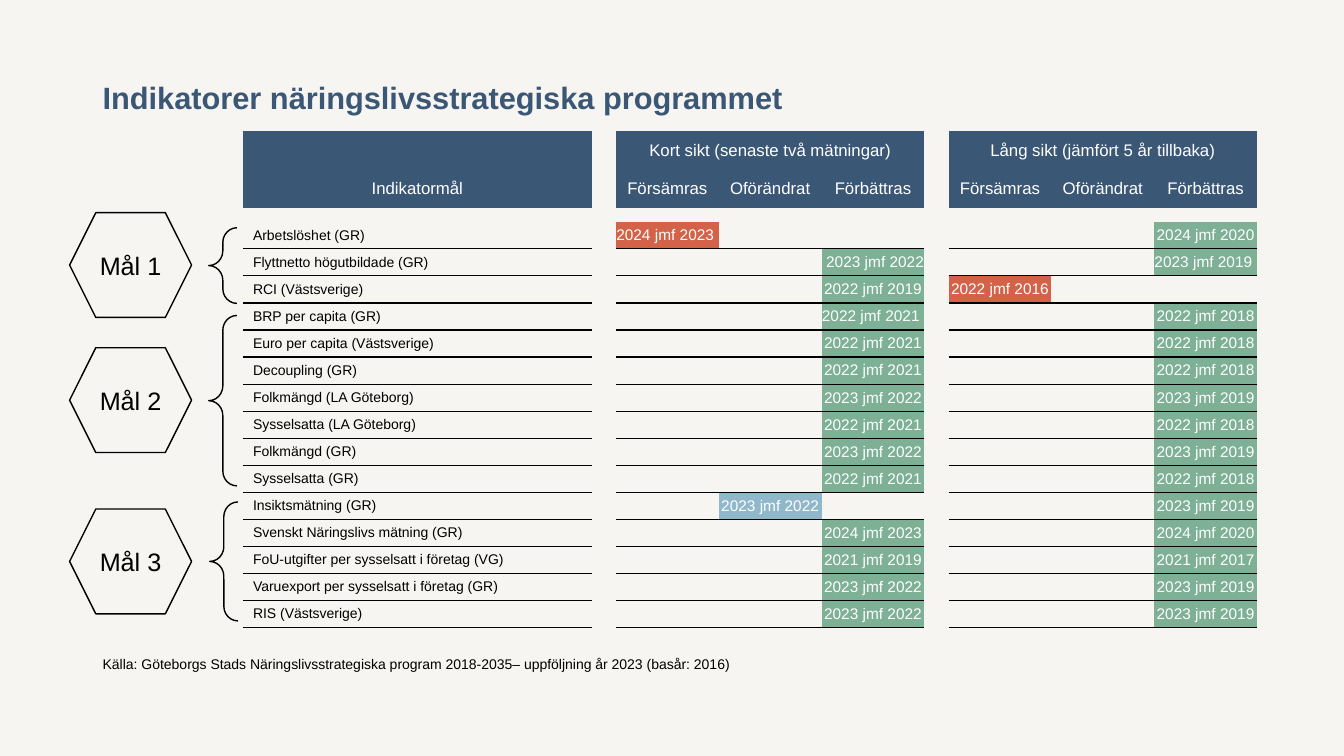
from dataclasses import dataclass

from lxml import etree
from pptx import Presentation
from pptx import util as u
from pptx.dml.color import RGBColor
from pptx.enum import shapes, text
from pptx.oxml import ns


@dataclass(frozen=True)
class Theme:
    font: str = "Arial"
    background: str = "F6F5F1"
    navy: str = "3B5776"
    black: str = "000000"
    white: str = "FFFFFF"
    outcomes: tuple = ("D36248", "8FB8CA", "7DB094")
    title: int = 22
    goal: int = 18
    header: int = 12
    period: int = 11
    body: int = 10
    empty: int = 8
    line: int = 1


THEME = Theme()
WORSE, SAME, BETTER = range(3)
SPACER_COLUMNS = (1, 5)
PERIOD_STARTS = {2: "Kort sikt (senaste två mätningar)", 6: "Lång sikt (jämfört 5 år tillbaka)"}
OUTCOME_NAMES = ("Försämras", "Oförändrat", "Förbättras")
FIRST_DATA_ROW = 3
NO_GRID_STYLE = "{2D5ABB26-0587-4C30-8999-92F81FD0307C}"
ZERO_MARGINS = dict.fromkeys(("margin_left", "margin_right", "margin_top", "margin_bottom"), 0)

INDICATORS = [
    ("Arbetslöshet (GR)", WORSE, "2024 jmf 2023 ", BETTER, "2024 jmf 2020"),
    ("Flyttnetto högutbildade (GR)", BETTER, " 2023 jmf 2022", BETTER, "2023 jmf 2019 "),
    ("RCI (Västsverige)", BETTER, "2022 jmf 2019", WORSE, "2022 jmf 2016"),
    ("BRP per capita (GR)", BETTER, "2022 jmf 2021 ", BETTER, "2022 jmf 2018"),
    ("Euro per capita (Västsverige)", BETTER, "2022 jmf 2021", BETTER, "2022 jmf 2018"),
    ("Decoupling (GR)", BETTER, "2022 jmf 2021", BETTER, "2022 jmf 2018"),
    ("Folkmängd (LA Göteborg)", BETTER, "2023 jmf 2022", BETTER, "2023 jmf 2019"),
    ("Sysselsatta (LA Göteborg)", BETTER, "2022 jmf 2021", BETTER, "2022 jmf 2018"),
    ("Folkmängd (GR)", BETTER, "2023 jmf 2022", BETTER, "2023 jmf 2019"),
    ("Sysselsatta (GR)", BETTER, "2022 jmf 2021", BETTER, "2022 jmf 2018"),
    ("Insiktsmätning (GR)", SAME, "2023 jmf 2022", BETTER, "2023 jmf 2019"),
    ("Svenskt Näringslivs mätning (GR)", BETTER, "2024 jmf 2023", BETTER, "2024 jmf 2020"),
    ("FoU-utgifter per sysselsatt i företag (VG)", BETTER, "2021 jmf 2019", BETTER, "2021 jmf 2017"),
    ("Varuexport per sysselsatt i företag (GR)", BETTER, "2023 jmf 2022", BETTER, "2023 jmf 2019"),
    ("RIS (Västsverige)", BETTER, "2023 jmf 2022", BETTER, "2023 jmf 2019"),
]

GOALS = [
    ("Mål 1", 2.11, (2.07, 2.26, 0.28, 0.75)),
    ("Mål 2", 3.45, (2.07, 3.13, 0.28, 1.69)),
    ("Mål 3", 5.05, (2.08, 4.98, 0.28, 1.18)),
]


def apply_format(target, values):
    for name, value in values.items():
        setattr(target, name, value)


def inches(*lengths):
    return [u.Inches(length) for length in lengths]


def write(frame, content, size, color, bold=False, **paragraph_format):
    paragraph = frame.paragraphs[0]
    apply_format(paragraph, paragraph_format)
    run = paragraph.add_run()
    run.text = content
    apply_format(run.font, {"name": THEME.font, "size": u.Pt(size), "bold": bold})
    run.font.color.rgb = RGBColor.from_string(color)


def add_text(slide, box, content, size, color, **text_format):
    frame = slide.shapes.add_textbox(*inches(*box)).text_frame
    apply_format(frame, {"word_wrap": True, "vertical_anchor": text.MSO_ANCHOR.BOTTOM})
    write(frame, content, size, color, **text_format)


def add_outline(slide, kind, box):
    shape = slide.shapes.add_shape(kind, *inches(*box))
    shape.shadow.inherit = False
    shape.fill.background()
    shape.line.color.rgb = RGBColor.from_string(THEME.black)
    shape.line.width = u.Pt(THEME.line)
    return shape


def add_goal(slide, name, top, brace_box):
    brace = add_outline(slide, shapes.MSO_SHAPE.LEFT_BRACE, brace_box)
    brace.adjustments[0] = 0.52
    hexagon = add_outline(slide, shapes.MSO_SHAPE.HEXAGON, (0.69, top, 1.21, 1.04))
    hexagon.text_frame.vertical_anchor = text.MSO_ANCHOR.MIDDLE
    write(hexagon.text_frame, name, THEME.goal, THEME.black, alignment=text.PP_ALIGN.CENTER)


def add_border(cell, side):
    properties = cell._tc.get_or_add_tcPr()
    line = etree.SubElement(properties, ns.qn(f"a:{side}"), w=str(u.Pt(THEME.line)))
    fill = etree.SubElement(line, ns.qn("a:solidFill"))
    etree.SubElement(fill, ns.qn("a:srgbClr"), val=THEME.black)


def prepare_cell(cell, row, column):
    cell.vertical_anchor = text.MSO_ANCHOR.MIDDLE
    if column not in SPACER_COLUMNS:
        if row > FIRST_DATA_ROW:
            add_border(cell, "lnT")
        if row >= FIRST_DATA_ROW:
            add_border(cell, "lnB")


def shrink_empty(cell):
    apply_format(cell, ZERO_MARGINS)
    paragraph = cell.text_frame.paragraphs[0]._p
    etree.SubElement(paragraph, ns.qn("a:endParaRPr"), sz=str(THEME.empty * 100))


def fill_cell(cell, color, content="", size=THEME.header):
    cell.fill.solid()
    cell.fill.fore_color.rgb = RGBColor.from_string(color)
    if content:
        write(cell.text_frame, content, size, THEME.white, alignment=text.PP_ALIGN.CENTER)


def fill_headers(table):
    fill_cell(table.cell(0, 0), THEME.navy)
    fill_cell(table.cell(1, 0), THEME.navy, "Indikatormål")
    for start, period in PERIOD_STARTS.items():
        table.cell(0, start).merge(table.cell(0, start + 2))
        fill_cell(table.cell(0, start), THEME.navy, period)
        for offset, outcome in enumerate(OUTCOME_NAMES):
            fill_cell(table.cell(1, start + offset), THEME.navy, outcome)


def fill_indicator(table, row, name, *results):
    write(table.cell(row, 0).text_frame, name, THEME.body, THEME.black)
    for start, outcome, period in zip(PERIOD_STARTS, results[::2], results[1::2]):
        cell = table.cell(row, start + outcome)
        apply_format(cell, ZERO_MARGINS)
        fill_cell(cell, THEME.outcomes[outcome], period, THEME.period)


def add_indicator_table(slide):
    count = len(INDICATORS)
    widths = [3.46] + [0.24, 1.02, 1.02, 1.02] * 2
    heights = [0.38, 0.38, 0.14] + [4.03 / count] * count
    box = inches(2.41, 1.3, sum(widths), sum(heights))
    table = slide.shapes.add_table(len(heights), len(widths), *box).table
    apply_format(table, {"first_row": False, "horz_banding": False})
    table._tbl.tblPr.find(ns.qn("a:tableStyleId")).text = NO_GRID_STYLE
    for column, width in zip(table.columns, widths):
        column.width = u.Inches(width)
    for row, height in zip(table.rows, heights):
        row.height = u.Inches(height)
    for row in range(len(heights)):
        for column in range(len(widths)):
            prepare_cell(table.cell(row, column), row, column)
    fill_headers(table)
    for row, indicator in enumerate(INDICATORS, FIRST_DATA_ROW):
        fill_indicator(table, row, *indicator)
    for cell in table.iter_cells():
        if not cell.text_frame.text:
            shrink_empty(cell)


def main():
    presentation = Presentation()
    apply_format(presentation, {"slide_width": u.Inches(13.33), "slide_height": u.Inches(7.5)})
    slide = presentation.slides.add_slide(presentation.slide_layouts[6])
    slide.background.fill.solid()
    slide.background.fill.fore_color.rgb = RGBColor.from_string(THEME.background)
    add_text(slide, (0.92, 0.4, 11.5, 0.8), "Indikatorer näringslivsstrategiska programmet",
             THEME.title, THEME.navy, bold=True, line_spacing=u.Pt(31))
    add_text(slide, (0.92, 6.45, 10.79, 0.27),
             "Källa: Göteborgs Stads Näringslivsstrategiska program 2018-2035– uppföljning år 2023 (basår: 2016)",
             THEME.body, THEME.black)
    add_indicator_table(slide)
    for goal in GOALS:
        add_goal(slide, *goal)
    presentation.save("out.pptx")


if __name__ == "__main__":
    main()
